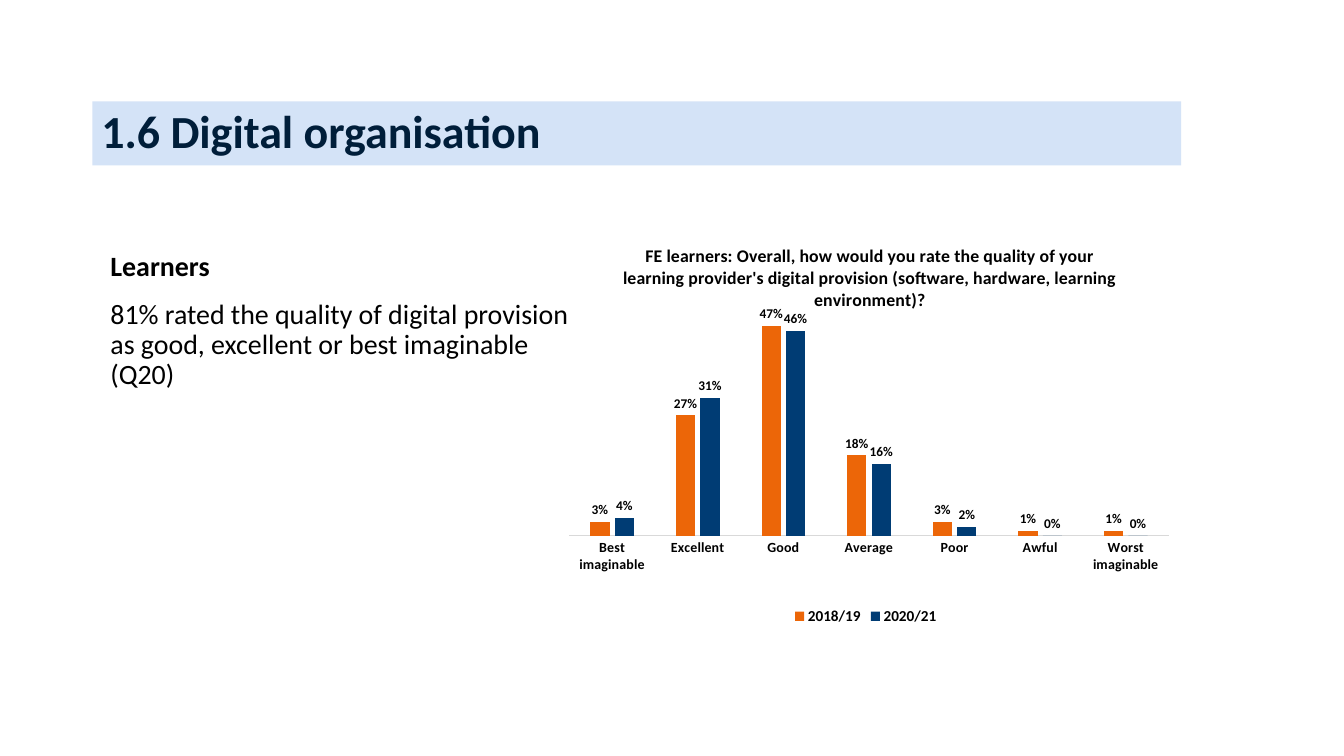
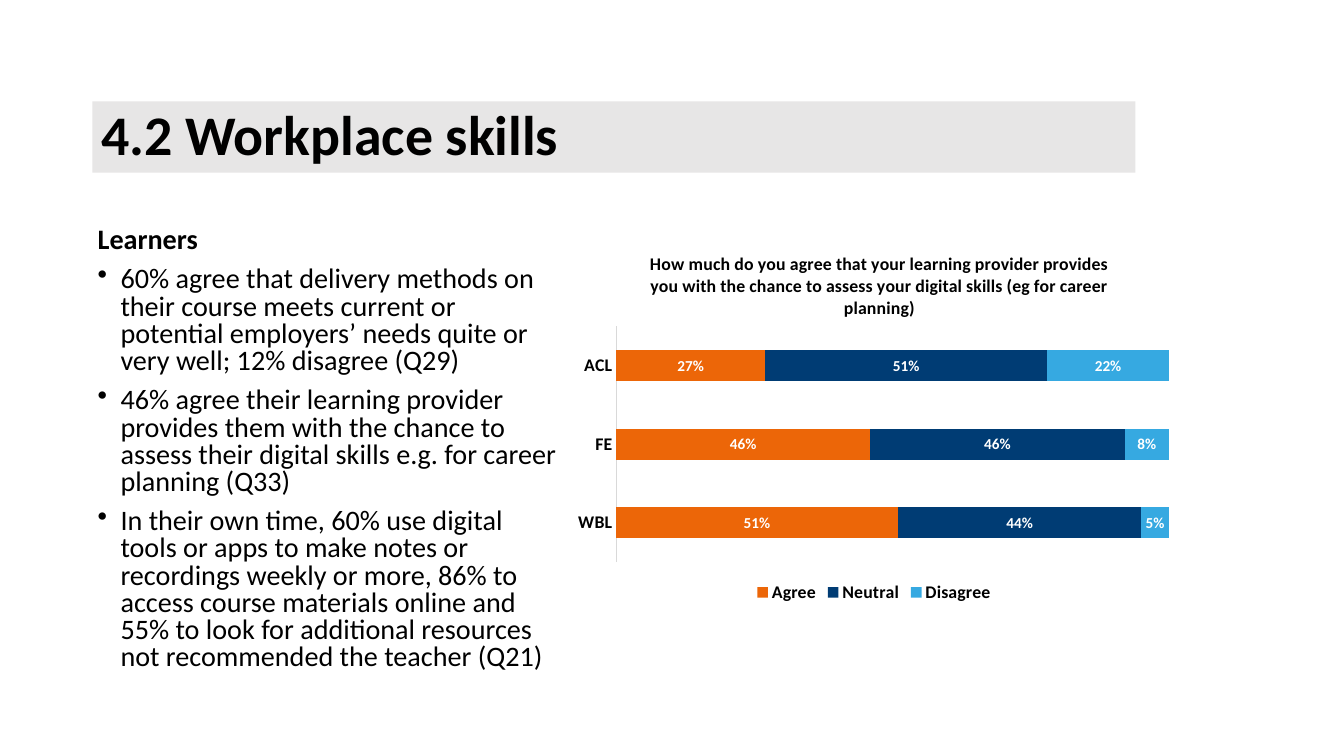
from lxml import etree
from pptx import Presentation
from pptx.chart.data import CategoryChartData
from pptx.dml.color import RGBColor
from pptx.enum.chart import (XL_CHART_TYPE, XL_LABEL_POSITION,
                             XL_LEGEND_POSITION, XL_TICK_MARK)
from pptx.enum.shapes import MSO_SHAPE
from pptx.enum.text import MSO_ANCHOR, PP_ALIGN
from pptx.oxml.ns import qn
from pptx.util import Pt

PX = 9144  # one hundredth of an inch
FACE = "Calibri"
BLACK = RGBColor(0x00, 0x00, 0x00)
WHITE = RGBColor(0xFF, 0xFF, 0xFF)
INK = RGBColor(0x00, 0x1E, 0x3A)
PALE = RGBColor(0xD4, 0xE3, 0xF7)
GREY = RGBColor(0xE7, 0xE6, 0xE6)
RULE = RGBColor(0xD9, 0xD9, 0xD9)
ORANGE = RGBColor(0xEC, 0x66, 0x08)
NAVY = RGBColor(0x00, 0x3C, 0x74)
SKY = RGBColor(0x36, 0xA9, 0xE1)
FILLS = (ORANGE, NAVY, SKY)

COLUMN = XL_CHART_TYPE.COLUMN_CLUSTERED
STACK = XL_CHART_TYPE.BAR_STACKED
ABOVE = XL_LABEL_POSITION.OUTSIDE_END
MIDDLE = XL_LABEL_POSITION.CENTER
BOTTOM = XL_LEGEND_POSITION.BOTTOM
NO_TICK = XL_TICK_MARK.NONE
RECT = MSO_SHAPE.RECTANGLE
ANCHOR = MSO_ANCHOR.MIDDLE
LEFT = PP_ALIGN.LEFT


def scale(box):
    return [n * PX for n in box]


def apply(item, **values):
    for name, value in values.items():
        setattr(item, name, value)


def style(font, size, color=BLACK, bold=True):
    apply(font, name=FACE, size=Pt(size), bold=bold)
    font.color.rgb = color


def band(slide, box, text, fill, size, color):
    """Title on a coloured strip."""
    shape = slide.shapes.add_shape(RECT, *scale(box))
    shape.shadow.inherit = False
    shape.fill.solid()
    shape.fill.fore_color.rgb = fill
    shape.line.fill.background()
    frame = shape.text_frame
    apply(frame, word_wrap=True, vertical_anchor=ANCHOR)
    para = frame.paragraphs[0]
    apply(para, text=text, alignment=LEFT, line_spacing=0.9)
    style(para.font, size, color)


def bullet(para, indent):
    props = para._p.get_or_add_pPr()
    props.set("marL", str(indent * PX))
    props.set("indent", str(-indent * PX))
    etree.SubElement(props, qn("a:buChar")).set("char", "•")


def notes(slide, box, head, points, size, line, gap, indent=0):
    """Bold heading over points, bulleted when there is an indent."""
    frame = slide.shapes.add_textbox(*scale(box)).text_frame
    frame.word_wrap = True
    for i, text in enumerate([head, *points]):
        para = frame.add_paragraph() if i else frame.paragraphs[0]
        if i and indent:
            bullet(para, indent)
        apply(para, text=text, line_spacing=line)
        if i:
            para.space_before = Pt(gap)
        style(para.font, size, bold=not i)


def place(parent, index, **values):
    """Give a chart part a fixed place, in shares of the chart."""
    for old in parent.findall(qn("c:layout")):
        parent.remove(old)
    layout = etree.Element(qn("c:layout"))
    manual = etree.SubElement(layout, qn("c:manualLayout"))
    for name, value in values.items():
        etree.SubElement(manual, qn("c:" + name)).set("val", str(value))
    parent.insert(index, layout)


def graph(slide, box, kind, title, cats, rows, spot, plot_box, top,
          gap, overlap, label, axis_size, key_size, flip=False):
    data = CategoryChartData(number_format="0%")
    data.categories = cats
    for name, values in rows.items():
        data.add_series(name, values)
    chart = slide.shapes.add_chart(kind, *scale(box), data).chart
    style(chart.font, 10, bold=False)

    chart.has_title = True
    para = chart.chart_title.text_frame.paragraphs[0]
    run = para.add_run()
    run.text = title
    style(run.font, 14)
    root = chart.element
    edge = {"xMode": "edge", "yMode": "edge"}
    place(root.xpath("c:chart/c:title")[0], 1,
          **edge, **dict(zip("xy", spot)))
    place(root.xpath("c:chart/c:plotArea")[0], 0, layoutTarget="inner",
          **edge, **dict(zip("xywh", plot_box)))

    chart.has_legend = True
    apply(chart.legend, position=BOTTOM, include_in_layout=False)
    style(chart.legend.font, key_size)

    axis = chart.category_axis
    apply(axis, major_tick_mark=NO_TICK, minor_tick_mark=NO_TICK,
          has_major_gridlines=False, reverse_order=flip)
    axis.format.line.color.rgb = RULE
    axis.format.line.width = Pt(0.75)
    style(axis.tick_labels.font, axis_size)
    apply(chart.value_axis, minimum_scale=0, maximum_scale=top,
          has_major_gridlines=False, visible=False)

    plot = chart.plots[0]
    apply(plot, gap_width=gap, overlap=overlap, vary_by_categories=False)
    size, color, where = label
    for series, fill in zip(plot.series, FILLS):
        series.format.fill.solid()
        series.format.fill.fore_color.rgb = fill
        tags = series.data_labels
        apply(tags, show_value=True, number_format="0%",
              number_format_is_linked=False, position=where)
        style(tags.font, size, color)


def digital(slide):
    band(slide, (101, 111, 1191, 70), "1.6 Digital organisation",
         PALE, 36.2, INK)
    notes(slide, (111, 271, 524, 205), "Learners",
          ["81% rated the quality of digital provision as good, excellent "
           "or best imaginable (Q20)"], size=22, line=0.9, gap=13.8)
    graph(slide, (602, 245, 690, 443), COLUMN,
          "FE learners: Overall, how would you rate the quality of your "
          "learning provider's digital provision (software, hardware, "
          "learning environment)?",
          ["Best imaginable", "Excellent", "Good", "Average", "Poor",
           "Awful", "Worst imaginable"],
          {"2018/19": (0.03, 0.27, 0.47, 0.18, 0.03, 0.01, 0.01),
           "2020/21": (0.04, 0.31, 0.46, 0.16, 0.02, 0, 0)},
          spot=(0.11, 0.04), plot_box=(0.03, 0.22, 0.95, 0.55), top=0.5,
          gap=219, overlap=-27, label=(10.5, BLACK, ABOVE),
          axis_size=11, key_size=12)


def skills(slide):
    band(slide, (101, 111, 1141, 78), "4.2 Workplace skills",
         GREY, 44, BLACK)
    notes(slide, (97, 244, 524, 501), "Learners",
          ["60% agree that delivery methods on their course meets current "
           "or potential employers’ needs quite or very well; 12% disagree "
           "(Q29)",
           "46% agree their learning provider provides them with the chance "
           "to assess their digital skills e.g. for career planning (Q33)",
           "In their own time, 60% use digital tools or apps to make notes "
           "or recordings weekly or more, 86% to access course materials "
           "online and 55% to look for additional resources not recommended "
           "the teacher (Q21)"], size=22.2, line=0.8, gap=10, indent=25)
    graph(slide, (620, 255, 672, 409), STACK,
          "How much do you agree that your learning provider provides you "
          "with the chance to assess your digital skills (eg for career "
          "planning)",
          ["ACL", "FE", "WBL"],
          {"Agree": (0.27, 0.46, 0.51), "Neutral": (0.51, 0.46, 0.44),
           "Disagree": (0.22, 0.08, 0.05)},
          spot=(0.13, 0.04), plot_box=(0.08, 0.25, 0.9, 0.63), top=1,
          gap=150, overlap=100, label=(12, WHITE, MIDDLE),
          axis_size=14, key_size=14, flip=True)


def main():
    deck = Presentation()
    apply(deck, slide_width=1470 * PX, slide_height=827 * PX)
    blank = deck.slide_layouts[6]
    for build in (digital, skills):
        build(deck.slides.add_slide(blank))
    deck.save("out.pptx")


if __name__ == "__main__":
    main()
